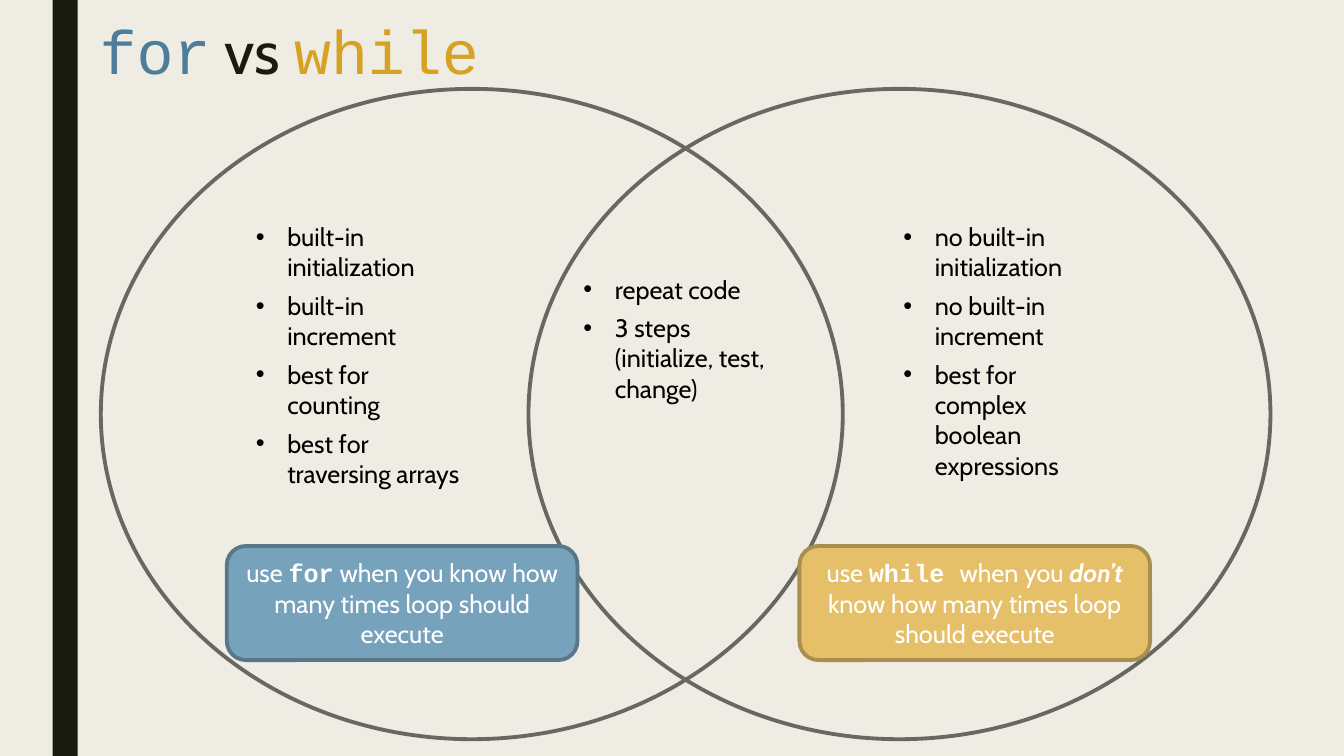
from lxml.etree import SubElement
from pptx import Presentation
from pptx.dml.color import RGBColor
from pptx.enum.shapes import MSO_SHAPE as Shape
from pptx.enum.text import MSO_ANCHOR as Anchor, MSO_AUTO_SIZE as AutoSize, PP_ALIGN as Align
from pptx.oxml.ns import qn
from pptx.util import Pt

CREAM = RGBColor(0xEF, 0xED, 0xE3)
DARK = RGBColor(0x19, 0x1B, 0x0E)
GREY = RGBColor(0x68, 0x68, 0x63)
BLACK = RGBColor(0, 0, 0)
WHITE = RGBColor(0xFF, 0xFF, 0xFF)
BLUE_TEXT = RGBColor(0x4D, 0x7D, 0x99)
GOLD_TEXT = RGBColor(0xD7, 0xA1, 0x24)
BLUE_FILL = RGBColor(0x77, 0xA2, 0xBB)
BLUE_EDGE = RGBColor(0x58, 0x78, 0x8A)
GOLD_FILL = RGBColor(0xE6, 0xC0, 0x69)
GOLD_EDGE = RGBColor(0xAA, 0x8E, 0x4E)

SANS, MONO = "Cabin", "Courier New"
EDGE_WIDTH = 2.75
LIST_WIDTH = 161.5
BULLET_INDENT = 22.5

LISTS = [
    (1, 175.5, 154.5, 221.5, ["built-in initialization", "built-in increment",
                              "best for counting", "best for traversing arrays"]),
    (2, 409.5, 192, 101, ["repeat code", "3 steps (initialize, test, change)"]),
    (3, 638, 154.5, 194, ["no built-in initialization", "no built-in increment",
                          "best for complex boolean expressions"]),
]
CODE = {"name": MONO, "bold": True}
CALLOUTS = [
    (162, BLUE_FILL, BLUE_EDGE, [
        ("use ", {}), ("for", CODE),
        (" when you know how many times loop should execute", {})]),
    (571, GOLD_FILL, GOLD_EDGE, [
        ("use ", {}), ("while ", CODE), ("when you ", {}),
        ("don’t", {"bold": True, "italic": True}),
        (" know how many times loop should execute", {})]),
]


def place(item, left, top, width, height):
    box = dict(left=left, top=top, width=width, height=height)
    for name, value in box.items():
        setattr(item, name, Pt(value))


def add_span(para, text, size, color, **format_values):
    span = para.add_run()
    span.text = text
    values = {"name": SANS, "size": Pt(size), "bold": False, **format_values}
    for name, value in values.items():
        setattr(span.font, name, value)
    span.font.color.rgb = color


def add_bullet(para):
    properties = para._p.get_or_add_pPr()
    properties.set("marL", str(Pt(BULLET_INDENT)))
    properties.set("indent", str(-Pt(BULLET_INDENT)))
    SubElement(properties, qn("a:buFont"), typeface="Arial")
    SubElement(properties, qn("a:buChar"), char="•")


def add_figure(page, kind, box, fill=None, edge=None):
    figure = page.shapes.add_shape(kind, *map(Pt, box))
    figure.shadow.inherit = False
    if fill is None:
        figure.fill.background()
    else:
        figure.fill.solid()
        figure.fill.fore_color.rgb = fill
    if edge is None:
        figure.line.fill.background()
    else:
        figure.line.color.rgb = edge
        figure.line.width = Pt(EDGE_WIDTH)
    return figure


def write_title(page):
    title = page.shapes.title
    place(title, 64, 12, 756, 116.5)
    frame = title.text_frame
    frame.auto_size = AutoSize.NONE
    frame.vertical_anchor = Anchor.TOP
    para = frame.paragraphs[0]
    para.alignment = Align.LEFT
    para.line_spacing = 0.89
    add_span(para, "for", 44, BLUE_TEXT, name=MONO)
    add_span(para, " vs ", 44, DARK)
    add_span(para, "while", 44, GOLD_TEXT, name=MONO)


def write_list(body, left, top, height, entries):
    place(body, left, top, LIST_WIDTH, height)
    frame = body.text_frame
    frame.word_wrap = True
    frame.auto_size = AutoSize.SHAPE_TO_FIT_TEXT
    frame.vertical_anchor = Anchor.TOP
    for position, entry in enumerate(entries):
        para = frame.add_paragraph() if position else frame.paragraphs[0]
        para.space_before = Pt(6 if position else 0)
        add_bullet(para)
        add_span(para, entry, 18, BLACK)


def add_callout(page, left, fill, edge, spans):
    callout = add_figure(page, Shape.ROUNDED_RECTANGLE, (left, 390, 250.5, 81.5), fill, edge)
    frame = callout.text_frame
    frame.word_wrap = True
    frame.vertical_anchor = Anchor.MIDDLE
    para = frame.paragraphs[0]
    para.alignment = Align.CENTER
    for text, format_values in spans:
        add_span(para, text, 18, WHITE, **format_values)


def main():
    deck = Presentation()
    deck.slide_width, deck.slide_height = Pt(960), Pt(540)
    page = deck.slides.add_slide(deck.slide_layouts.get_by_name("Comparison"))
    page.background.fill.solid()
    page.background.fill.fore_color.rgb = CREAM

    write_title(page)
    bodies = {body.placeholder_format.idx: body for body in page.placeholders}
    for index, *content in LISTS:
        write_list(bodies[index], *content)
    unused = bodies[4].element
    unused.getparent().remove(unused)

    add_figure(page, Shape.RECTANGLE, (37.5, 0, 18, 540), DARK)
    for left in (72, 377.5):
        add_figure(page, Shape.OVAL, (left, 63.5, 530, 464.5), edge=GREY)
    for callout in CALLOUTS:
        add_callout(page, *callout)
    deck.save("out.pptx")


if __name__ == "__main__":
    main()
